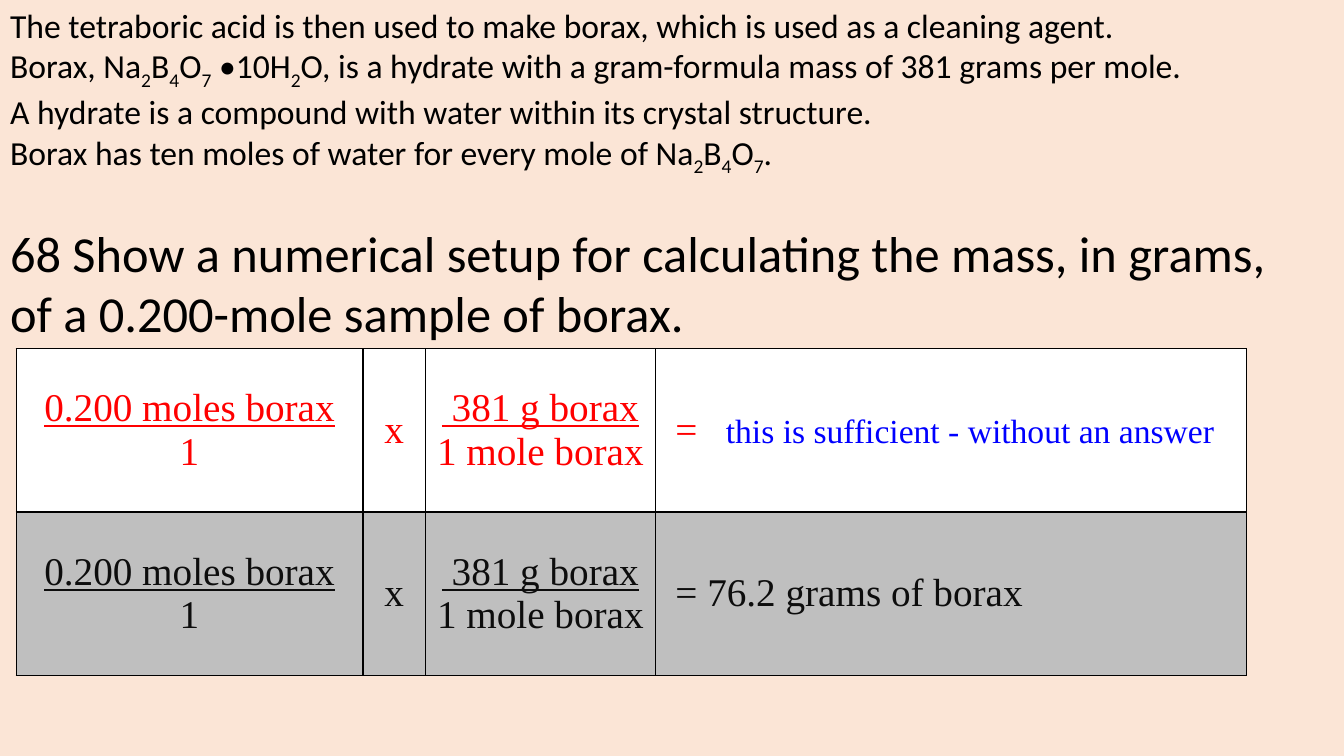
from lxml import etree
from pptx import Presentation
from pptx.dml.color import RGBColor
from pptx.enum.text import MSO_ANCHOR, MSO_AUTO_SIZE, PP_ALIGN
from pptx.oxml.ns import qn
from pptx.util import Inches, Pt

LEFT, CENTER = PP_ALIGN.LEFT, PP_ALIGN.CENTER
TOP, MIDDLE = MSO_ANCHOR.TOP, MSO_ANCHOR.MIDDLE
FIXED = MSO_AUTO_SIZE.NONE

PEACH = RGBColor(0xFB, 0xE5, 0xD6)
BLACK = RGBColor(0, 0, 0)
WHITE = RGBColor(0xFF, 0xFF, 0xFF)
GRAY = RGBColor(0xBF, 0xBF, 0xBF)
INK = RGBColor(0x0D, 0x0D, 0x0D)
RED = RGBColor(0xFF, 0, 0)
BLUE = RGBColor(0, 0, 0xFF)
SANS, SERIF = "Calibri", "Times New Roman"

WIDE, HIGH = 13.33, 7.5
COLS = [3.44, 0.62, 2.28, 5.86]
ROW = 1.62

FACTS = [
    "The tetraboric acid is then used to make borax, which is used as a cleaning agent.",
    "Borax, Na_2B_4O_7 •10H_2O, is a hydrate with a gram-formula mass of 381 grams per mole.",
    "A hydrate is a compound with water within its crystal structure.",
    "Borax has ten moles of water for every mole of Na_2B_4O_7.",
]
ASK = ["68 Show a numerical setup for calculating the mass, in grams,",
       "of a 0.200-mole sample of borax."]
SETUP = [("0.200 moles borax", "1"), ("x",), (" 381 g borax", "1 mole borax")]
ROWS = [
    (WHITE, RED, [("=", 28, RED), ("\t", 28, RED),
                  ("this is sufficient - without an answer", 24, BLUE)]),
    (GRAY, INK, [("= 76.2 grams of borax", 28, INK)]),
]


def add_run(para, text, size, color, face, line=False):
    """Append one formatted run to a paragraph."""
    run = para.add_run()
    run.text = text
    font = run.font
    font.size, font.name, font.underline = Pt(size), face, line
    font.color.rgb = color
    return run


def add_para(frame, first, align):
    """Give the first paragraph of a frame or a new one."""
    para = frame.paragraphs[0] if first else frame.add_paragraph()
    para.alignment = align
    return para


def add_prose(shape, box, lines, size):
    """Fill a placeholder with plain lines; _ marks a subscript digit."""
    shape.left, shape.top, shape.width, shape.height = map(Inches, box)
    frame = shape.text_frame
    frame.word_wrap, frame.auto_size = True, FIXED
    frame.vertical_anchor = TOP
    for i, text in enumerate(lines):
        para = add_para(frame, i == 0, LEFT)
        para.space_before = Pt(0)
        props = para._p.get_or_add_pPr()
        props.set("marL", "0")
        props.set("indent", "0")
        etree.SubElement(props, qn("a:buNone"))
        head, *rest = text.split("_")
        add_run(para, head, size, BLACK, SANS)
        for part in rest:
            sub = add_run(para, part[0], size, BLACK, SANS)
            sub._r.get_or_add_rPr().set("baseline", "-25000")
            add_run(para, part[1:], size, BLACK, SANS)


def style_cell(cell, fill):
    """Set the fill, anchor and black border of a cell."""
    cell.fill.solid()
    cell.fill.fore_color.rgb = fill
    cell.vertical_anchor = MIDDLE
    props = cell._tc.get_or_add_tcPr()
    for i, side in enumerate("LRTB"):
        edge = etree.Element(qn("a:ln" + side), w=str(Pt(1)))
        paint = etree.SubElement(edge, qn("a:solidFill"))
        etree.SubElement(paint, qn("a:srgbClr"), val=str(BLACK))
        props.insert(i, edge)


def add_work(slide, left, top):
    """Draw the table with the setup and its result."""
    frame = slide.shapes.add_table(
        len(ROWS), len(COLS), Inches(left), Inches(top),
        Inches(sum(COLS)), Inches(ROW * len(ROWS)))
    table = frame.table
    table.first_row = table.horz_banding = False
    for col, width in zip(table.columns, COLS):
        col.width = Inches(width)
    for row, (fill, color, answer) in zip(table.rows, ROWS):
        row.height = Inches(ROW)
        cells = list(row.cells)
        for cell in cells:
            style_cell(cell, fill)
        for cell, lines in zip(cells, SETUP):
            cell.margin_left = cell.margin_right = Inches(0.05)
            for i, text in enumerate(lines):
                para = add_para(cell.text_frame, i == 0, CENTER)
                over = i < len(lines) - 1
                add_run(para, text, 28, color, SERIF, over)
        last = cells[-1]
        last.margin_left = Inches(0.2)
        para = add_para(last.text_frame, True, LEFT)
        tabs = etree.SubElement(para._p.get_or_add_pPr(), qn("a:tabLst"))
        etree.SubElement(tabs, qn("a:tab"), pos=str(Inches(0.5)), algn="l")
        for text, size, tint in answer:
            add_run(para, text, size, tint, SERIF)


def main():
    """Build and save the slide."""
    deck = Presentation()
    deck.slide_width, deck.slide_height = Inches(WIDE), Inches(HIGH)
    slide = deck.slides.add_slide(deck.slide_layouts[1])
    back = slide.background.fill
    back.solid()
    back.fore_color.rgb = PEACH
    add_prose(slide.placeholders[1], (0, 0, WIDE, 2.15), FACTS, 24)
    add_prose(slide.shapes.title, (0, 2.15, WIDE, 1.31), ASK, 36)
    add_work(slide, 0.16, 3.46)
    deck.save("out.pptx")


if __name__ == "__main__":
    main()
